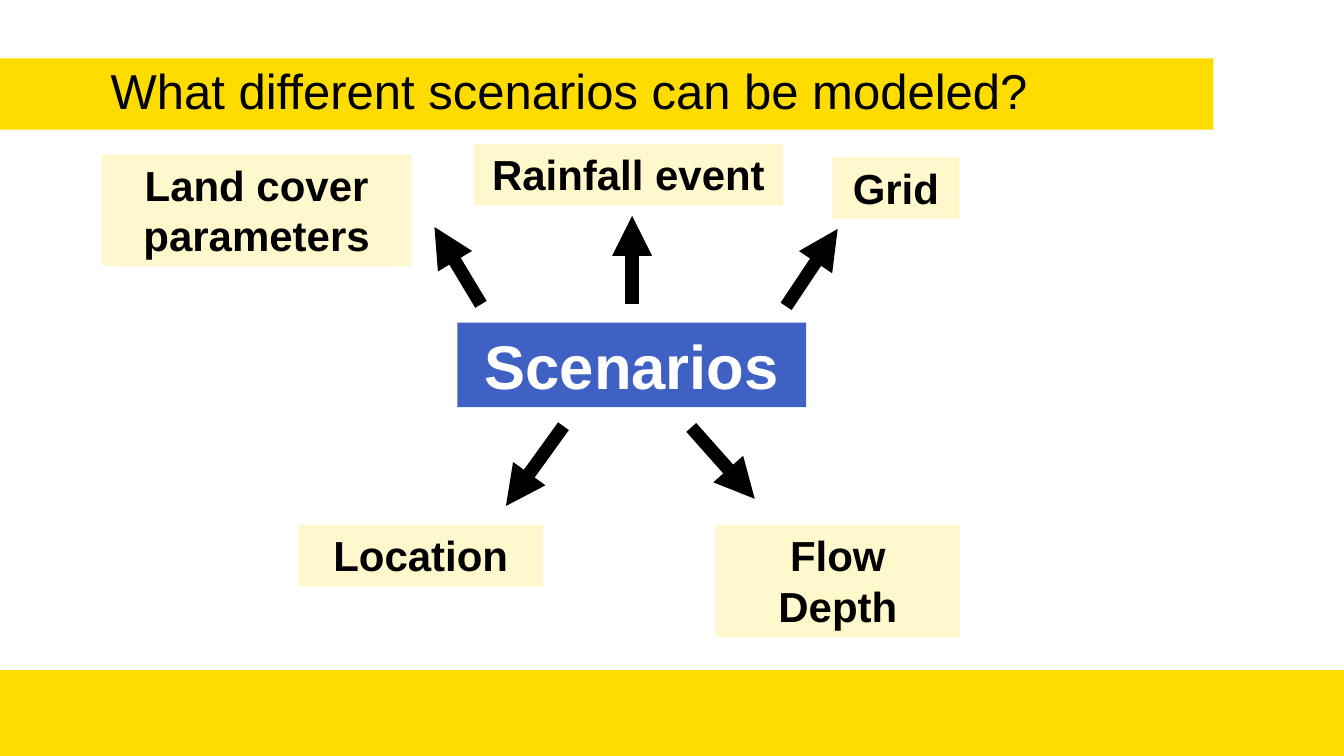
from lxml.etree import SubElement
from pptx import Presentation
from pptx.dml.color import RGBColor
from pptx.enum.shapes import MSO_CONNECTOR, MSO_SHAPE
from pptx.enum.text import MSO_ANCHOR, PP_ALIGN
from pptx.oxml.ns import qn
from pptx.util import Cm, Pt

# Content: lengths in centimetres
SLIDE_WIDTH, SLIDE_HEIGHT = 33.87, 19.05
YELLOW, CREAM, BLUE, BLACK, WHITE = "FFDC00", "FFF8CC", "3F61C4", "000000", "FFFFFF"
FOOTER_HEIGHT = 2.16
TITLE = "What different scenarios can be modeled?"
TITLE_BAR = (0, 1.47, 30.58, 1.8)
TITLE_INDENT = 2.79
HUB = (["Scenarios"], (11.53, 8.13, 8.79, 2.13))
TOPICS = [  # paragraphs, (left, top, width, height)
    (["Rainfall event"], (11.94, 3.63, 7.8, 1.55)),
    (["Land cover parameters"], (2.57, 3.89, 7.8, 2.82)),
    (["Flow", "Depth"], (18.03, 13.23, 6.17, 2.82)),
    (["Grid"], (20.98, 3.96, 3.2, 1.55)),
    (["Location"], (7.52, 13.23, 6.17, 1.55)),
]
ARROWS = [  # from x, from y, to x, to y
    (17.42, 10.77, 19.02, 12.57),
    (19.81, 7.72, 21.11, 5.77),
    (12.12, 7.67, 10.95, 5.72),
    (14.2, 10.74, 12.75, 12.75),
    (15.93, 7.65, 15.93, 5.44),
]


def color(hex_string):
    return RGBColor.from_string(hex_string)


def add_box(page, place, fill):
    box = page.shapes.add_shape(MSO_SHAPE.RECTANGLE, *map(Cm, place))
    box.shadow.inherit = False
    box.fill.solid()
    box.fill.fore_color.rgb = color(fill)
    box.line.fill.background()
    return box


def write(box, lines, size, ink, bold, align, anchor):
    frame = box.text_frame
    frame.word_wrap = True
    frame.vertical_anchor = anchor
    for index, line in enumerate(lines):
        para = frame.paragraphs[0] if index == 0 else frame.add_paragraph()
        para.alignment = align
        span = para.add_run()
        span.text = line
        span.font.name = "Arial"
        span.font.size = Pt(size)
        span.font.bold = bold
        span.font.color.rgb = color(ink)


def add_arrow(page, start_x, start_y, end_x, end_y):
    arrow = page.shapes.add_connector(
        MSO_CONNECTOR.STRAIGHT, Cm(start_x), Cm(start_y), Cm(end_x), Cm(end_y))
    arrow.line.color.rgb = color(BLACK)
    arrow.line.width = Pt(9.5)
    SubElement(arrow.line._get_or_add_ln(), qn("a:tailEnd"), type="triangle")
    SubElement(arrow._element.spPr, qn("a:effectLst"))


def main():
    deck = Presentation()
    deck.slide_width, deck.slide_height = Cm(SLIDE_WIDTH), Cm(SLIDE_HEIGHT)
    page = deck.slides.add_slide(deck.slide_layouts[6])

    # Footer band and title bar
    add_box(page, (0, SLIDE_HEIGHT - FOOTER_HEIGHT, SLIDE_WIDTH, FOOTER_HEIGHT), YELLOW)
    title_bar = add_box(page, TITLE_BAR, YELLOW)
    write(title_bar, [TITLE], 35, BLACK, False, PP_ALIGN.LEFT, MSO_ANCHOR.MIDDLE)
    title_bar.text_frame.margin_left = Cm(TITLE_INDENT)
    title_bar.text_frame.paragraphs[0].line_spacing = 0.9

    # Hub, arrows and topics
    lines, place = HUB
    write(add_box(page, place, BLUE), lines, 44, WHITE, True,
          PP_ALIGN.CENTER, MSO_ANCHOR.TOP)
    for arrow in ARROWS:
        add_arrow(page, *arrow)
    for lines, place in TOPICS:
        write(add_box(page, place, CREAM), lines, 30, BLACK, True,
              PP_ALIGN.CENTER, MSO_ANCHOR.TOP)

    deck.save("out.pptx")


if __name__ == "__main__":
    main()
